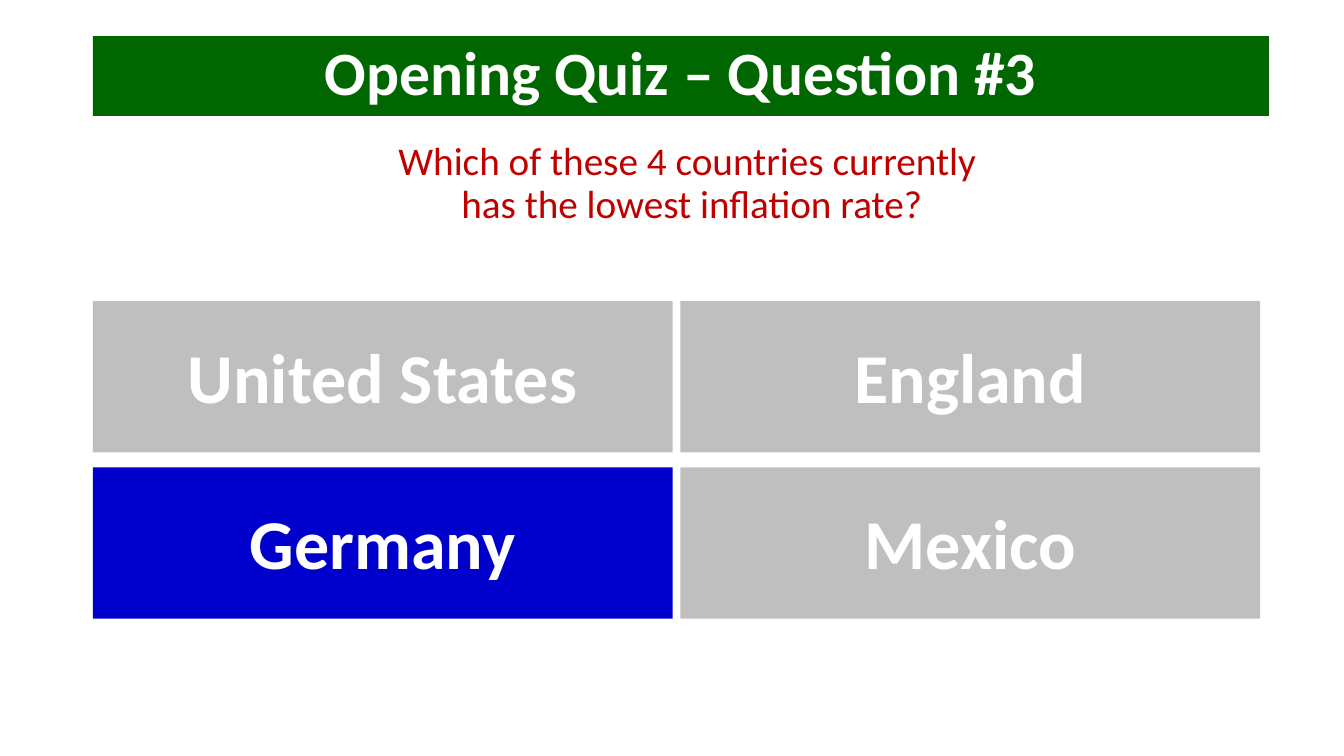
from pptx import Presentation
from pptx.dml.color import RGBColor
from pptx.enum.shapes import MSO_SHAPE
from pptx.enum.text import MSO_ANCHOR, MSO_AUTO_SIZE, PP_ALIGN
from pptx.util import Cm, Pt
from lxml.etree import SubElement
from pptx.oxml.ns import qn

TITLE = "Opening Quiz – Question #3"
QUESTION = "Which of these 4 countries currently \vhas the lowest inflation rate?"
ANSWERS = [["United States", "England"],
           ["Germany", "Mexico"]]
CORRECT = "Germany"

GREEN, RED, BLUE, GREY, WHITE = "006600", "C00000", "0000CC", "BFBFBF", "FFFFFF"
LEFT = 2.34
GRID_TOP, CARD_W, CARD_H = 7.59, 14.61, 3.81
GAP_X, GAP_Y = 0.2, 0.38


def set_fill(sp, color):
    sp.fill.solid()
    sp.fill.fore_color.rgb = RGBColor.from_string(color)


def place(sp, left, top, width, height):
    sp.left, sp.top, sp.width, sp.height = Cm(left), Cm(top), Cm(width), Cm(height)


def write(sp, text, size, color=WHITE, bold=False, anchor=MSO_ANCHOR.MIDDLE, inset_top=0.13):
    tf = sp.text_frame
    tf.text = text
    tf.word_wrap = True
    tf.auto_size = MSO_AUTO_SIZE.NONE
    tf.vertical_anchor = anchor
    tf.margin_top = Cm(inset_top)
    p = tf.paragraphs[0]
    pPr = p._p.get_or_add_pPr()
    pPr.set("marL", "0")
    pPr.set("indent", "0")
    SubElement(pPr, qn("a:buNone"))
    p.alignment = PP_ALIGN.CENTER
    p.line_spacing = 0.9
    p.space_before = Pt(0)
    for r in p.runs:
        r.font.name = "Calibri"
        r.font.size = Pt(size)
        r.font.bold = bold
        r.font.color.rgb = RGBColor.from_string(color)


prs = Presentation()
prs.slide_width, prs.slide_height = Cm(33.87), Cm(19.05)
s = prs.slides.add_slide(prs.slide_layouts[1])

title, question = s.shapes.title, s.placeholders[1]
place(title, LEFT, 0.91, 29.64, 2.01)
set_fill(title, GREEN)
write(title, TITLE, 44, bold=True)

place(question, LEFT, 3.45, 30.18, 13.72)
write(question, QUESTION, 28, color=RED, anchor=MSO_ANCHOR.TOP)

for row, names in enumerate(ANSWERS):
    for col, name in enumerate(names):
        card = s.shapes.add_shape(
            MSO_SHAPE.RECTANGLE,
            Cm(LEFT + col * (CARD_W + GAP_X)), Cm(GRID_TOP + row * (CARD_H + GAP_Y)),
            Cm(CARD_W), Cm(CARD_H))
        card.shadow.inherit = False
        card.line.fill.background()
        set_fill(card, BLUE if name == CORRECT else GREY)
        write(card, name, 50, bold=True, inset_top=0.33)

prs.save("out.pptx")
